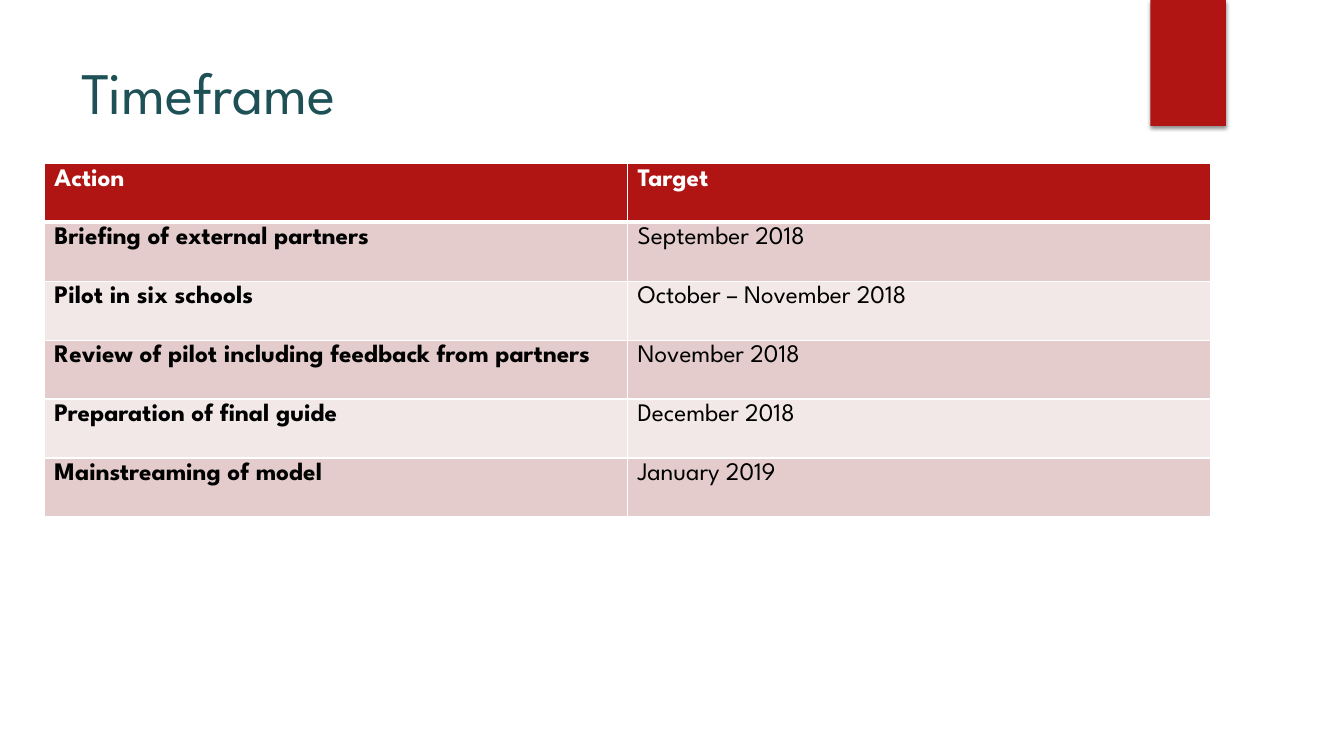
from lxml import etree
from pptx import Presentation
from pptx.dml.color import RGBColor
from pptx.enum.shapes import MSO_SHAPE
from pptx.enum.text import MSO_ANCHOR
from pptx.oxml import parse_xml
from pptx.oxml.ns import nsdecls, qn
from pptx.util import Inches, Pt

RECTANGLE = MSO_SHAPE.RECTANGLE
OVAL = MSO_SHAPE.OVAL
TOP = MSO_ANCHOR.TOP

FONT = "League Spartan"
WIDTH, HEIGHT = 13.33, 7.5
COLORS = {
    "accent": "B01513",
    "title": "1E5155",
    "glow": "F3F3F3",
    "band_dark": "E4CCCC",
    "band_light": "F2E8E7",
    "text": "000000",
    "white": "FFFFFF",
}
TIMEFRAME = [
    ("Action", "Target"),
    ("Briefing of external partners", "September 2018"),
    ("Pilot in six schools", "October – November 2018"),
    ("Review of pilot including feedback from partners", "November 2018"),
    ("Preparation of final guide", "December 2018"),
    ("Mainstreaming of model", "January 2019"),
]


def rgb(name):
    return RGBColor.from_string(COLORS[name])


def style_text(paragraph, size, color, bold=False):
    for run in paragraph.runs:
        run.font.name = FONT
        run.font.size = Pt(size)
        run.font.bold = bold
        run.font.color.rgb = rgb(color)


def add_glow(slide, box):
    glow = slide.shapes.add_shape(OVAL, *map(Inches, box))
    glow.shadow.inherit = False
    glow.line.fill.background()
    glow.fill.background()
    stops = "".join(
        f'<a:gs pos="{position * 1000}"><a:srgbClr val="{COLORS["glow"]}">'
        f'<a:alpha val="{alpha * 1000}"/></a:srgbClr></a:gs>'
        for position, alpha in ((0, 7), (36, 6), (69, 0))
    )
    gradient = parse_xml(
        f'<a:gradFill {nsdecls("a")}><a:gsLst>{stops}</a:gsLst><a:path path="circle">'
        '<a:fillToRect l="50000" t="50000" r="50000" b="50000"/></a:path></a:gradFill>'
    )
    properties = glow.element.spPr
    properties.replace(properties.find(qn("a:noFill")), gradient)


def add_ribbon(slide, box):
    ribbon = slide.shapes.add_shape(RECTANGLE, *map(Inches, box))
    ribbon.fill.solid()
    ribbon.fill.fore_color.rgb = rgb("accent")
    ribbon.line.fill.background()
    ribbon.shadow.inherit = False
    effects = ribbon.element.spPr.find(qn("a:effectLst"))
    effects.append(parse_xml(
        f'<a:outerShdw {nsdecls("a")} blurRad="{Pt(3)}" dist="{Pt(2)}" dir="5400000" '
        'algn="ctr" rotWithShape="0"><a:srgbClr val="000000">'
        '<a:alpha val="45000"/></a:srgbClr></a:outerShdw>'
    ))


def add_title(slide, box, title):
    frame = slide.shapes.add_textbox(*map(Inches, box)).text_frame
    frame.word_wrap = True
    frame.vertical_anchor = TOP
    frame.text = title
    style_text(frame.paragraphs[0], 42, "title")


def set_borders(cell, row):
    properties = cell._tc.get_or_add_tcPr()
    widths = {"lnL": 1, "lnR": 1, "lnT": 3 if row == 1 else 1, "lnB": 3 if row == 0 else 1}
    for side, width in widths.items():
        border = etree.SubElement(properties, qn(f"a:{side}"), w=str(Pt(width)))
        fill = etree.SubElement(border, qn("a:solidFill"))
        etree.SubElement(fill, qn("a:srgbClr"), val=COLORS["white"])


def add_timeframe(slide, box, entries):
    column_count = len(entries[0])
    table = slide.shapes.add_table(len(entries), column_count, *map(Inches, box)).table
    for column in table.columns:
        column.width = Inches(box[2] / column_count)
    for row, entry in enumerate(entries):
        table.rows[row].height = Inches(box[3] / len(entries))
        header = row == 0
        band = "accent" if header else "band_dark" if row % 2 else "band_light"
        for column, label in enumerate(entry):
            cell = table.cell(row, column)
            set_borders(cell, row)
            cell.fill.solid()
            cell.fill.fore_color.rgb = rgb(band)
            cell.text = label
            style_text(cell.text_frame.paragraphs[0], 18,
                       "white" if header else "text", header or column == 0)


def main():
    deck = Presentation()
    deck.slide_width, deck.slide_height = Inches(WIDTH), Inches(HEIGHT)
    slide = deck.slides.add_slide(deck.slide_layouts[6])
    add_glow(slide, (9.41, 1.83, 3.08, 3.08))
    add_ribbon(slide, (11.41, 0, 0.75, HEIGHT / 6))
    add_title(slide, (0.71, HEIGHT / 15, 10.29, 1.53), "Timeframe")
    add_timeframe(slide, (0.44, 1.62, 11.57, 3.51), TIMEFRAME)
    deck.save("out.pptx")


if __name__ == "__main__":
    main()
